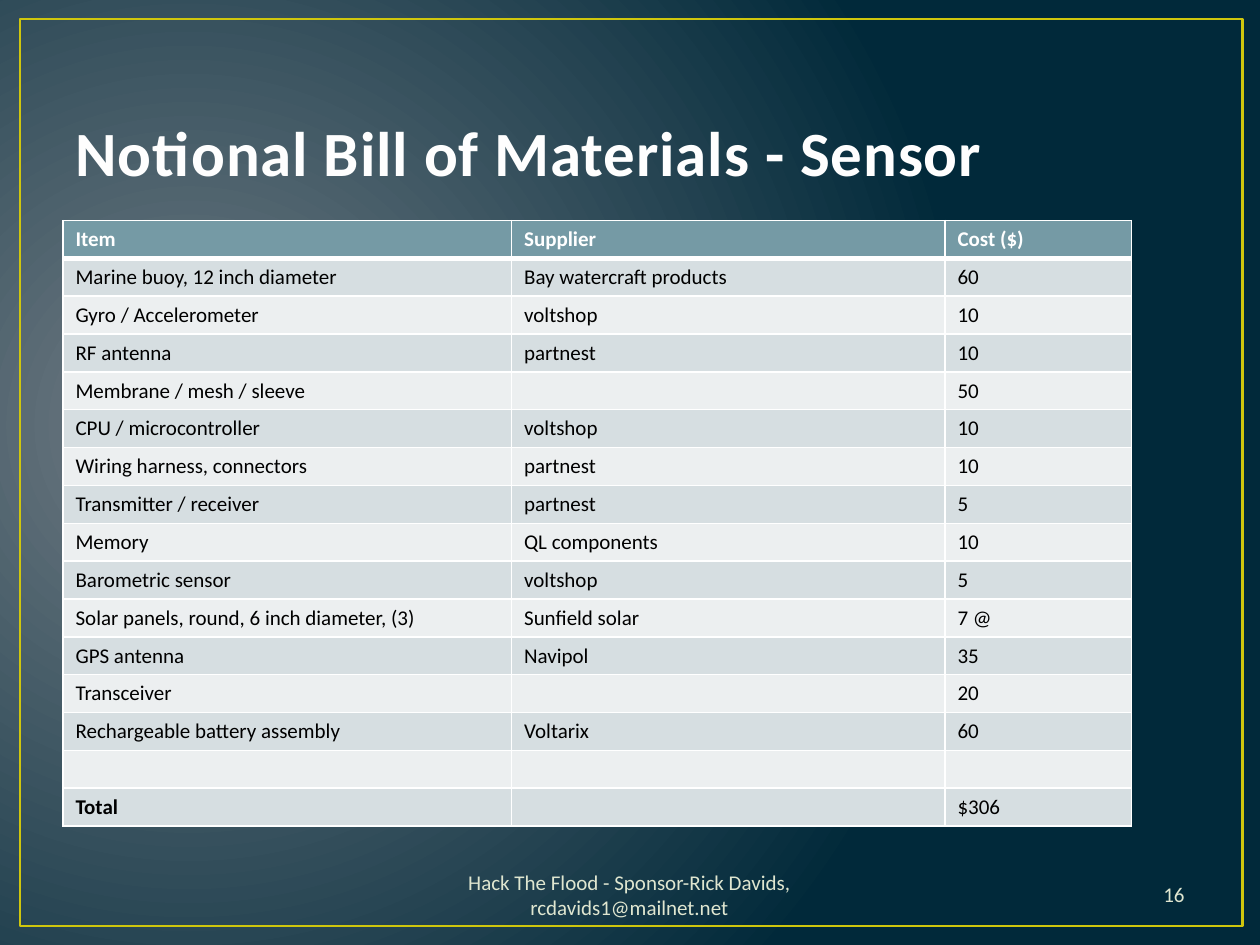
from dataclasses import dataclass

import pptx
import pptx.dml.color
import pptx.enum.shapes
import pptx.enum.text
import pptx.oxml
import pptx.oxml.ns
import pptx.util

Pt = pptx.util.Pt
Align = pptx.enum.text.PP_ALIGN
Anchor = pptx.enum.text.MSO_ANCHOR
NS = pptx.oxml.ns.nsdecls("a", "p")


@dataclass(frozen=True)
class Theme:
    face: str = "Calibri"
    glow: str = "717C84"
    deep: str = "01293A"
    frame: str = "CFC60D"
    title: str = "FEFEFE"
    edge: str = "384F55"
    note: str = "DFE6D0"
    head: str = "759AA5"
    odd: str = "D6DEE1"
    even: str = "ECEFF0"
    white: str = "FFFFFF"
    black: str = "000000"
    big: float = 36
    small: float = 12


THEME = Theme()


@dataclass(frozen=True)
class Label:
    text: str
    left: float
    top: float
    width: float
    height: float
    size: float
    color: str
    align: Align
    anchor: Anchor
    bold: bool = False


@dataclass(frozen=True)
class Part:
    item: str
    source: str
    cost: str


TITLE = Label("Notional Bill of Materials - Sensor", 36, 21.6, 648, 90,
              THEME.big, THEME.title, Align.LEFT, Anchor.BOTTOM, True)
NUMBER = Label("16", 516.24, 496.8, 167.76, 28.8,
               THEME.small, THEME.note, Align.RIGHT, Anchor.MIDDLE)
FOOTER = Label("Hack The Flood - Sponsor-Rick Davids, rcdavids1@mailnet.net",
               222.48, 496.8, 274.32, 28.8,
               THEME.small, THEME.note, Align.CENTER, Anchor.MIDDLE)

PARTS = [
    Part("Item", "Supplier", "Cost ($)"),
    Part("Marine buoy, 12 inch diameter", "Bay watercraft products", "60"),
    Part("Gyro / Accelerometer", "voltshop", "10"),
    Part("RF antenna", "partnest", "10"),
    Part("Membrane / mesh / sleeve", "", "50"),
    Part("CPU / microcontroller", "voltshop", "10"),
    Part("Wiring harness, connectors", "partnest", "10"),
    Part("Transmitter / receiver", "partnest", "5"),
    Part("Memory", "QL components", "10"),
    Part("Barometric sensor", "voltshop", "5"),
    Part("Solar panels, round, 6 inch diameter, (3)", "Sunfield solar", "7 @"),
    Part("GPS antenna", "Navipol", "35"),
    Part("Transceiver", "", "20"),
    Part("Rechargeable battery assembly", "Voltarix", "60"),
    Part("", "", ""),
    Part("Total", "", "$306"),
]
WIDTHS = (256.32, 247.68, 106.56)
ROW = 21.6


def rgb(color: str) -> pptx.dml.color.RGBColor:
    return pptx.dml.color.RGBColor.from_string(color)


def solid(color: str) -> str:
    return f'<a:solidFill><a:srgbClr val="{color}"/></a:solidFill>'


def style(para, size: float, color: str, bold: bool) -> None:
    font = para.font
    font.name = THEME.face
    font.size = Pt(size)
    font.bold = bold
    font.color.rgb = rgb(color)


def paint(slide) -> None:
    """Fill the background with a round gradient."""
    stops = "".join(
        f'<a:gs pos="{pos}"><a:srgbClr val="{color}"/></a:gs>'
        for pos, color in ((0, THEME.glow), (100000, THEME.deep)))
    slide._element.cSld.insert(0, pptx.oxml.parse_xml(
        f'<p:bg {NS}><p:bgPr><a:gradFill rotWithShape="1">'
        f'<a:gsLst>{stops}</a:gsLst><a:path path="circle">'
        '<a:fillToRect l="15000" t="50000" r="85000" b="60000"/>'
        '</a:path></a:gradFill><a:effectLst/></p:bgPr></p:bg>'))


def border(slide) -> None:
    box = slide.shapes.add_shape(
        pptx.enum.shapes.MSO_SHAPE.RECTANGLE,
        Pt(11.52), Pt(10.8), Pt(698.4), Pt(518.4))
    box.shadow.inherit = False
    box.fill.background()
    box.line.color.rgb = rgb(THEME.frame)
    box.line.width = Pt(1.5)


def write(slide, label: Label):
    box = slide.shapes.add_textbox(
        Pt(label.left), Pt(label.top), Pt(label.width), Pt(label.height))
    frame = box.text_frame
    frame.word_wrap = True
    frame.vertical_anchor = label.anchor
    para = frame.paragraphs[0]
    para.text = label.text
    para.alignment = label.align
    style(para, label.size, label.color, label.bold)
    return para.runs[0]


def outline(run) -> None:
    """Space the letters and give them a thin edge."""
    props = run._r.get_or_add_rPr()
    props.set("spc", "50")
    props.insert(0, pptx.oxml.parse_xml(
        f'<a:ln {NS} w="{Pt(1.05)}">{solid(THEME.edge)}</a:ln>'))


def rule(cell, top: float, bottom: float) -> None:
    props = cell._tc.get_or_add_tcPr()
    sides = (("L", 1), ("R", 1), ("T", top), ("B", bottom))
    for spot, (side, width) in enumerate(sides):
        props.insert(spot, pptx.oxml.parse_xml(
            f'<a:ln{side} {NS} w="{Pt(width)}">'
            f'{solid(THEME.white)}</a:ln{side}>'))


def fill(cell, text: str, row: int) -> None:
    head = row == 0
    cell.fill.solid()
    cell.fill.fore_color.rgb = rgb(
        THEME.head if head else THEME.odd if row % 2 else THEME.even)
    para = cell.text_frame.paragraphs[0]
    style(para, THEME.small, THEME.white if head else THEME.black,
          head or text == "Total")
    if text:
        para.text = text
    else:  # keeps an empty row as low as the others
        para._p.append(pptx.oxml.parse_xml(
            f'<a:endParaRPr {NS} sz="{int(THEME.small * 100)}">'
            f'<a:latin typeface="{THEME.face}"/></a:endParaRPr>'))
    rule(cell, 3 if row == 1 else 1, 3 if head else 1)


def bill(slide) -> None:
    table = slide.shapes.add_table(
        len(PARTS), len(WIDTHS), Pt(36), Pt(126),
        Pt(sum(WIDTHS)), Pt(ROW * len(PARTS))).table
    for col, width in zip(table.columns, WIDTHS):
        col.width = Pt(width)
    for row, part in enumerate(PARTS):
        table.rows[row].height = Pt(ROW)
        for col, text in enumerate((part.item, part.source, part.cost)):
            fill(table.cell(row, col), text, row)


def main() -> None:
    deck = pptx.Presentation()
    deck.slide_width, deck.slide_height = Pt(720), Pt(540)
    slide = deck.slides.add_slide(deck.slide_layouts[6])

    # Backdrop
    paint(slide)
    border(slide)

    # Heading, page number, table and footer
    outline(write(slide, TITLE))
    write(slide, NUMBER)
    bill(slide)
    write(slide, FOOTER)

    deck.save("out.pptx")


if __name__ == "__main__":
    main()
